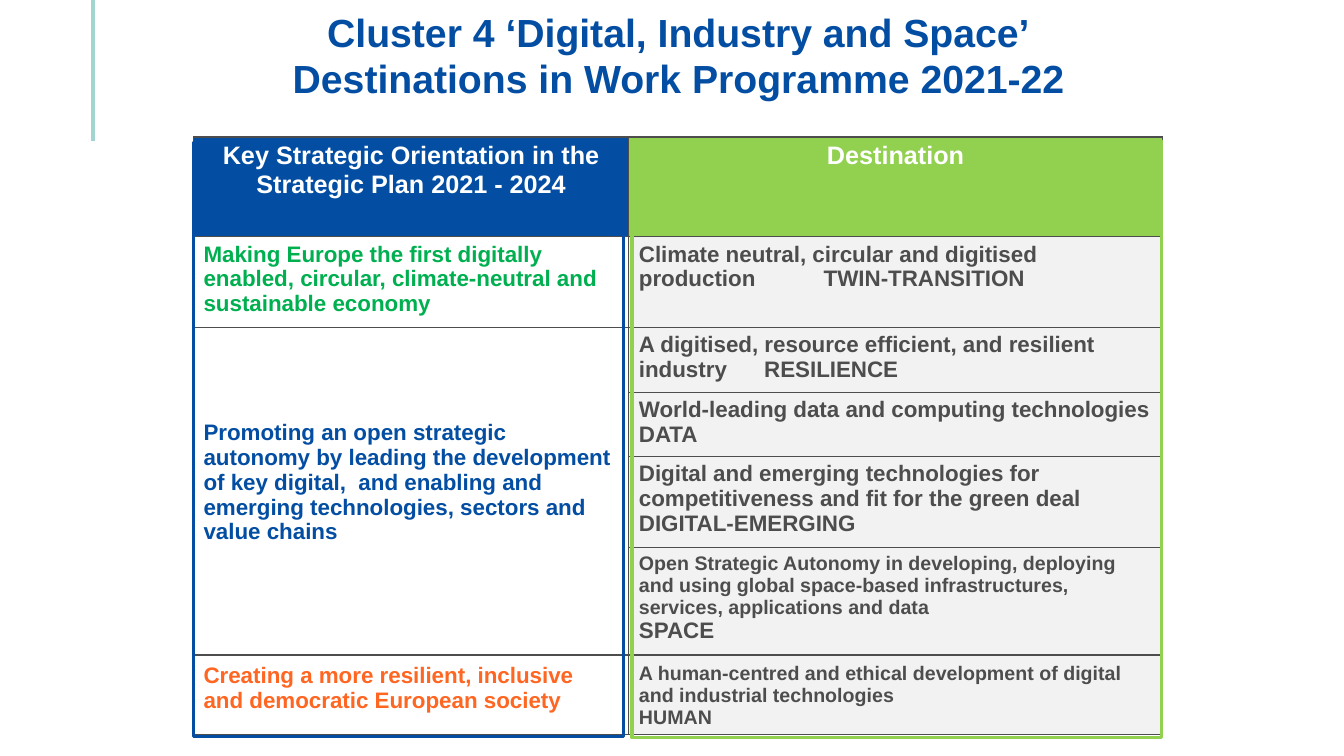
import pptx
import pptx.util
import pptx.dml.color
import pptx.enum.shapes
import pptx.enum.text
from lxml import etree

Pt = pptx.util.Pt
RGBColor = pptx.dml.color.RGBColor
ALIGN = pptx.enum.text.PP_ALIGN
SHAPE = pptx.enum.shapes.MSO_SHAPE

BLUE = RGBColor(0x03, 0x4E, 0xA2)
LIME = RGBColor(0x92, 0xD0, 0x50)
GREEN = RGBColor(0x00, 0xB0, 0x50)
ORANGE = RGBColor(0xFF, 0x66, 0x22)
GREY = RGBColor(0x4D, 0x4D, 0x4D)
PALE = RGBColor(0xF2, 0xF2, 0xF2)
WHITE = RGBColor(0xFF, 0xFF, 0xFF)
TEAL = RGBColor(0xA2, 0xD5, 0xD0)

# Content
TITLE = "Cluster 4 ‘Digital, Industry and Space’\vDestinations in Work Programme 2021-22"
HEADERS = [("Key Strategic Orientation in the Strategic Plan 2021 - 2024", BLUE),
           ("Destination", LIME)]

# Orientation: row, text, colour, top margin
ORIENTATIONS = [
    (1, "Making Europe the first digitally enabled, circular, climate-neutral "
        "and sustainable economy", GREEN, 3.6),
    (2, "Promoting an open strategic autonomy by leading the development of key digital,  "
        "and enabling and emerging technologies, sectors and value chains", BLUE, 66.2),
]
# Destination: lines with their sizes, tab stop before the short name
DESTINATIONS = [
    ([("Climate neutral, circular and digitised production\tTWIN-TRANSITION", 16)], 132),
    ([("A digitised, resource efficient, and resilient industry\tRESILIENCE", 16)], 89.5),
    ([("World-leading data and computing technologies", 16), ("DATA", 16)], None),
    ([("Digital and emerging technologies for competitiveness and fit for the green deal", 16),
      ("DIGITAL-EMERGING", 16)], None),
    ([("Open Strategic Autonomy in developing, deploying and using global space-based "
       "infrastructures, services, applications and data", 14), ("SPACE", 16)], None),
]
SOCIETY = "Creating a more resilient, inclusive and democratic European society"
HUMAN = [("A human-centred and ethical development of digital and industrial technologies", 14),
         ("HUMAN", 14)]

# Geometry in points
TABLE_LEFT = 138.2
COLUMNS = [311, 381]
MAIN_TOP, MAIN_ROWS = 97.9, [71.3, 64.1, 46.1, 46.1, 64.1, 76.3]
LAST_TOP, LAST_ROWS = 454.3, [70.6]
LAST_MARGIN = 19.3
FRAMES = [(451.4, 100.1, 378, 427, LIME), (138.2, 102.2, 307.4, 424.1, BLUE)]


def style_paragraph(para, size, color, align=ALIGN.LEFT):
    para.alignment = align
    for span in para.runs:
        font = span.font
        font.name, font.size, font.bold = "Arial", Pt(size), True
        font.color.rgb = color


def add_borders(cell):
    properties = cell._tc.get_or_add_tcPr()
    for place, side in enumerate(("lnL", "lnR", "lnT", "lnB")):
        line = etree.Element(pptx.oxml.ns.qn("a:" + side), w=str(Pt(1)))
        fill = etree.SubElement(line, pptx.oxml.ns.qn("a:solidFill"))
        etree.SubElement(fill, pptx.oxml.ns.qn("a:srgbClr"), val=str(GREY))
        properties.insert(place, line)


def add_table(page, top, rows):
    table = page.shapes.add_table(len(rows), len(COLUMNS), Pt(TABLE_LEFT), Pt(top),
                                  Pt(sum(COLUMNS)), Pt(sum(rows))).table
    table.first_row = table.horz_banding = False
    for column, width in zip(table.columns, COLUMNS):
        column.width = Pt(width)
    for row, height in zip(table.rows, rows):
        row.height = Pt(height)
        for cell, color in zip(row.cells, (WHITE, PALE)):
            cell.fill.solid()
            cell.fill.fore_color.rgb = color
            add_borders(cell)
    return table


def fill_cell(cell, lines, color, align=ALIGN.LEFT, margin=3.6, tab=None):
    cell.margin_top = Pt(margin)
    cell.text = "\n".join(text for text, size in lines)
    for para, (text, size) in zip(cell.text_frame.paragraphs, lines):
        style_paragraph(para, size, color, align)
        if tab:
            stops = etree.SubElement(para._p.get_or_add_pPr(), pptx.oxml.ns.qn("a:tabLst"))
            etree.SubElement(stops, pptx.oxml.ns.qn("a:tab"), pos=str(Pt(tab)), algn="l")


def main():
    deck = pptx.Presentation()
    deck.slide_width, deck.slide_height = Pt(960), Pt(540)
    page = deck.slides.add_slide(deck.slide_layouts[6])

    # Accent line
    accent = page.shapes.add_connector(pptx.enum.shapes.MSO_CONNECTOR.STRAIGHT,
                                       Pt(66.4), Pt(0), Pt(66.4), Pt(101))
    accent.line.color.rgb = TEAL
    accent.line.width = Pt(2.25)
    etree.SubElement(accent._element.spPr, pptx.oxml.ns.qn("a:effectLst"))

    # Last row, a table of its own behind the main one
    last = add_table(page, LAST_TOP, LAST_ROWS)
    fill_cell(last.cell(0, 0), [(SOCIETY, 16)], ORANGE, margin=LAST_MARGIN)
    fill_cell(last.cell(0, 1), HUMAN, GREY, margin=LAST_MARGIN)

    # Title
    box = page.shapes.add_textbox(Pt(168.5), Pt(0), Pt(632.2), Pt(73.4))
    frame = box.text_frame
    frame.word_wrap = True
    frame.margin_bottom = 0
    frame.vertical_anchor = pptx.enum.text.MSO_ANCHOR.BOTTOM
    para = frame.paragraphs[0]
    para.text = TITLE
    para.line_spacing = 0.98
    style_paragraph(para, 28, BLUE, ALIGN.CENTER)

    # Main table
    table = add_table(page, MAIN_TOP, MAIN_ROWS)
    table.cell(2, 0).merge(table.cell(len(MAIN_ROWS) - 1, 0))
    for column, (text, color) in enumerate(HEADERS):
        cell = table.cell(0, column)
        cell.fill.fore_color.rgb = color
        fill_cell(cell, [(text, 18)], WHITE, ALIGN.CENTER)
    for row, text, color, margin in ORIENTATIONS:
        fill_cell(table.cell(row, 0), [(text, 16)], color, margin=margin)
    for row, (lines, tab) in enumerate(DESTINATIONS, 1):
        fill_cell(table.cell(row, 1), lines, GREY, tab=tab)

    # Frames around the two columns
    for left, top, width, height, color in FRAMES:
        outline = page.shapes.add_shape(SHAPE.RECTANGLE, Pt(left), Pt(top), Pt(width), Pt(height))
        outline.shadow.inherit = False
        outline.fill.background()
        outline.line.color.rgb = color
        outline.line.width = Pt(2.25)

    deck.save("out.pptx")


if __name__ == "__main__":
    main()
